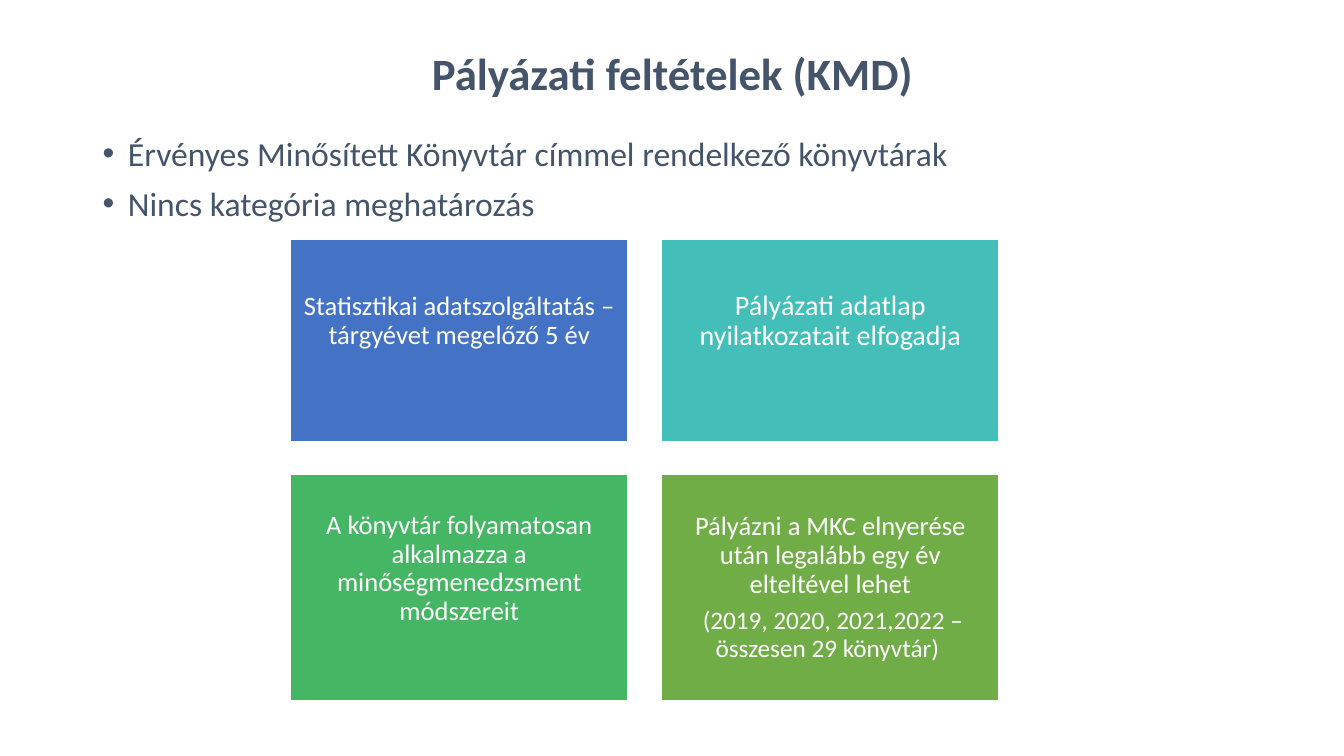
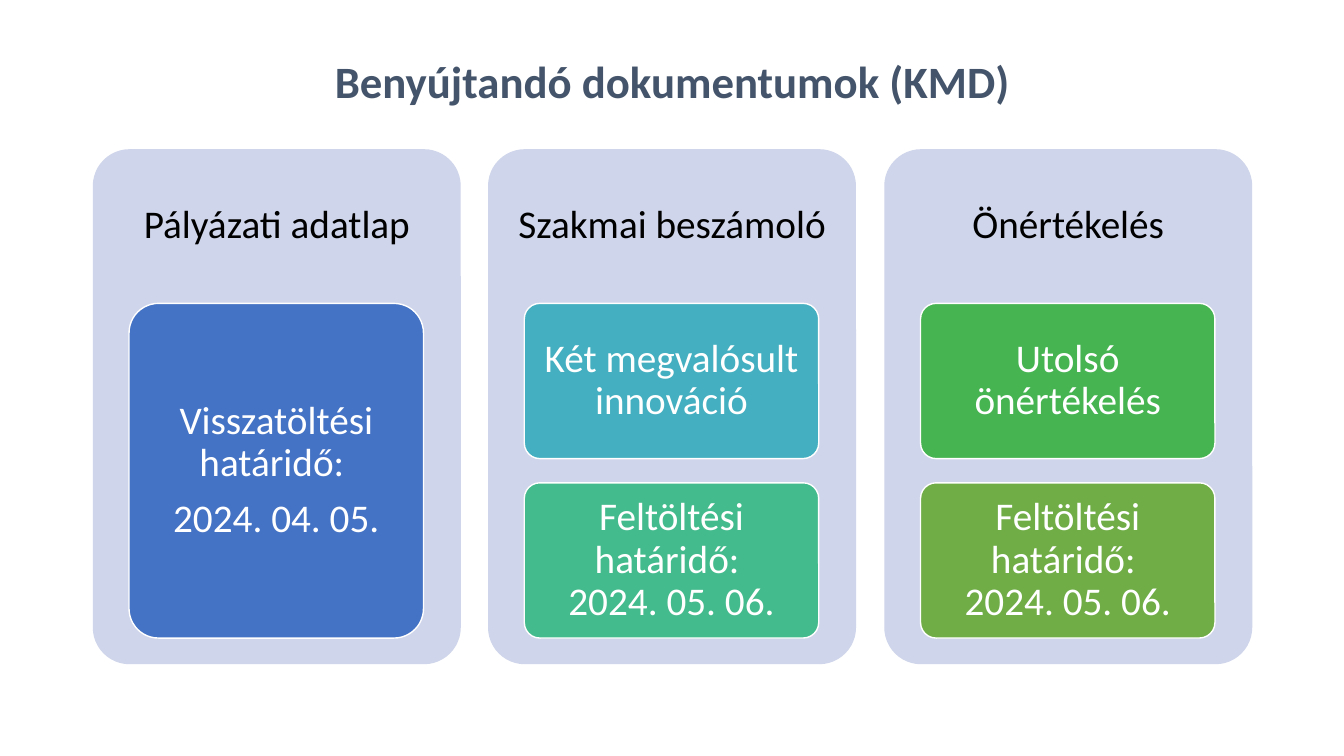
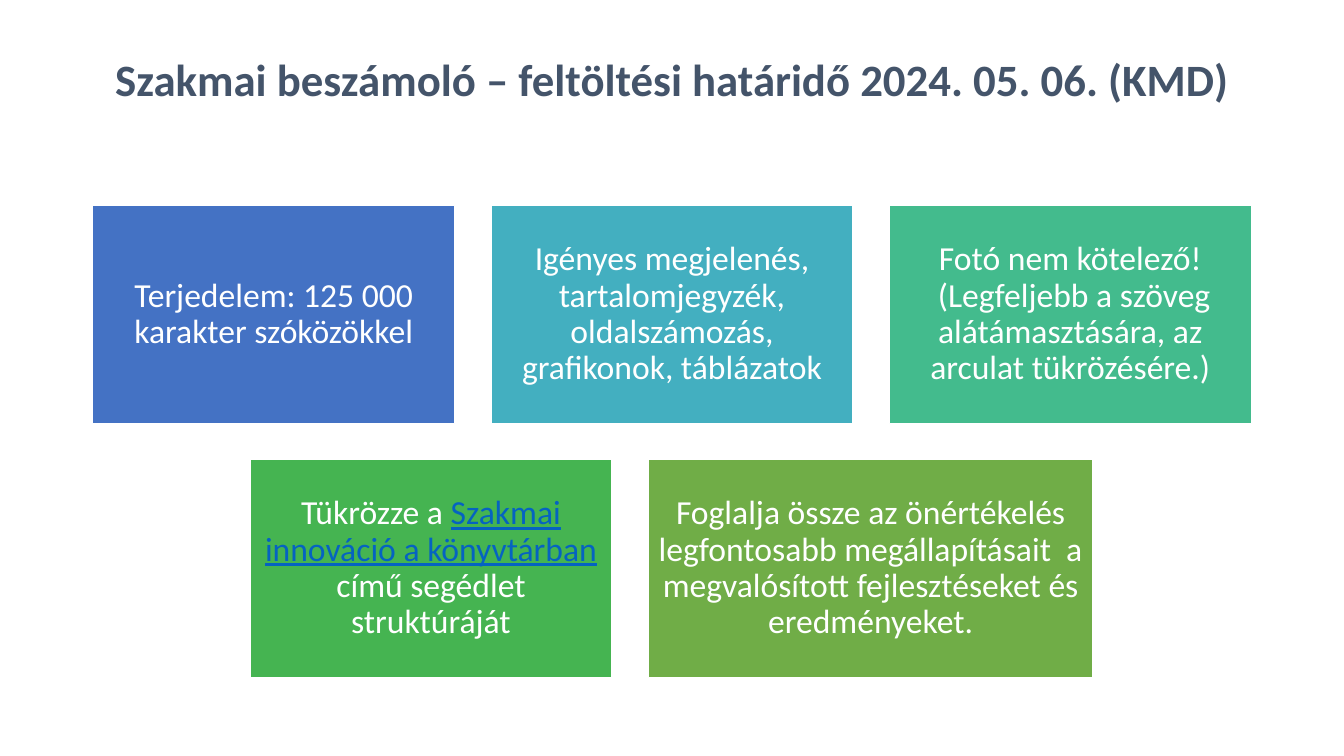
from dataclasses import dataclass
from typing import NamedTuple

from lxml.etree import SubElement
from pptx import Presentation
from pptx.dml.color import RGBColor
from pptx.enum.shapes import MSO_SHAPE as Preset
from pptx.enum.text import MSO_ANCHOR as Anchor, PP_ALIGN as Align
from pptx.oxml.ns import qn
from pptx.util import Emu, Pt

# Shared scale and style: 100 px to the inch
PX = 9144
SLIDE_WIDTH, SLIDE_HEIGHT = 1333, 750
CONTENT_LEFT, CONTENT_WIDTH = 92, 1150
TITLE_TOP = 40
FONT = "Calibri"
LINE_SPACING = 0.9
DIAGRAM_GAP = 0.35  # paragraph gap as a share of the text size

WHITE = RGBColor(0xFF, 0xFF, 0xFF)
BLACK = RGBColor(0x00, 0x00, 0x00)
SLATE = RGBColor(0x44, 0x54, 0x6A)
LINK_BLUE = RGBColor(0x05, 0x63, 0xC1)
PALE_BLUE = RGBColor(0xCF, 0xD5, 0xEA)
BLUE = RGBColor(0x44, 0x72, 0xC4)
CYAN = RGBColor(0x43, 0xAF, 0xC0)
TEAL = RGBColor(0x43, 0xBE, 0xB9)
MINT = RGBColor(0x43, 0xBB, 0x8D)
EMERALD = RGBColor(0x45, 0xB6, 0x64)
GREEN = RGBColor(0x45, 0xB4, 0x51)
OLIVE = RGBColor(0x70, 0xAD, 0x47)


class Box(NamedTuple):
    left: int
    top: int
    width: int
    height: int


class Insets(NamedTuple):
    left: int
    top: int
    right: int
    bottom: int


class Span(NamedTuple):
    text: str
    size: int | None = None
    color: RGBColor | None = None
    underline: bool = False


Line = str | list[Span]


@dataclass
class Tile:
    lines: list[Line]
    fill: RGBColor
    size: int = 24
    raise_by: int = 0  # extra bottom inset that lifts the text
    width: int = 359


@dataclass
class Panel:
    heading: str
    cards: list[Tile]


def emu(box: Box) -> list[Emu]:
    return [Emu(length * PX) for length in box]


# Text
def write(shape, lines: list[Line], *, size: int, color: RGBColor = WHITE,
          bold: bool = False, align: Align = Align.CENTER,
          anchor: Anchor = Anchor.MIDDLE, gap: float | None = None,
          bullet: bool = False, insets: Insets = Insets(10, 5, 10, 5)) -> None:
    frame = shape.text_frame
    frame.word_wrap = True
    frame.vertical_anchor = anchor
    (frame.margin_left, frame.margin_top,
     frame.margin_right, frame.margin_bottom) = [Emu(i * PX) for i in insets]
    for index, line in enumerate(lines):
        paragraph = frame.add_paragraph() if index else frame.paragraphs[0]
        paragraph.alignment = align
        paragraph.line_spacing = LINE_SPACING
        if index:
            paragraph.space_before = Pt(size * DIAGRAM_GAP if gap is None else gap)
        if bullet:
            properties = paragraph._p.get_or_add_pPr()
            properties.set("marL", str(25 * PX))
            properties.set("indent", str(-25 * PX))
            SubElement(properties, qn("a:buFont"), typeface="Arial")
            SubElement(properties, qn("a:buChar"), char="•")
        for span in [Span(line)] if isinstance(line, str) else line:
            for part_index, part in enumerate(span.text.split("\n")):
                if part_index:
                    paragraph.add_line_break()
                run = paragraph.add_run()
                run.text = part
                run.font.name = FONT
                run.font.size = Pt(span.size or size)
                run.font.bold = bold
                run.font.underline = span.underline
                run.font.color.rgb = span.color or color


def add_label(slide, box: Box, lines: list[Line], **text_format) -> None:
    write(slide.shapes.add_textbox(*emu(box)), lines, **text_format)


def add_titled_slide(presentation, title: str, height: int):
    slide = presentation.slides.add_slide(presentation.slide_layouts[6])
    add_label(slide, Box(CONTENT_LEFT, TITLE_TOP, CONTENT_WIDTH, height),
              [title], size=32, color=SLATE, bold=True)
    return slide


# Filled blocks
def add_block(slide, box: Box, fill: RGBColor, *, rounded: bool = False,
              outlined: bool = True):
    preset = Preset.ROUNDED_RECTANGLE if rounded else Preset.RECTANGLE
    shape = slide.shapes.add_shape(preset, *emu(box))
    shape.shadow.inherit = False
    if rounded:
        shape.adjustments[0] = 0.1
    shape.fill.solid()
    shape.fill.fore_color.rgb = fill
    if outlined:
        shape.line.color.rgb = WHITE
        shape.line.width = Pt(1)
    else:
        shape.line.fill.background()
    return shape


def add_tile_row(slide, tiles: list[Tile], *, top: int, height: int, gap: int,
                 inset: int, left: int | None = None) -> None:
    """Draw tiles side by side, centred on the slide unless left is given."""
    if left is None:
        row_width = sum(tile.width for tile in tiles) + gap * (len(tiles) - 1)
        left = round((SLIDE_WIDTH - row_width) / 2)
    for tile in tiles:
        shape = add_block(slide, Box(left, top, tile.width, height), tile.fill)
        write(shape, tile.lines, size=tile.size,
              insets=Insets(inset, inset, inset, inset + tile.raise_by))
        left += tile.width + gap


# Slide 1: conditions
def build_conditions(presentation) -> None:
    slide = add_titled_slide(presentation, "Pályázati feltételek (KMD)", 70)
    add_label(slide, Box(CONTENT_LEFT, 131, CONTENT_WIDTH, 100),
              ["Érvényes Minősített Könyvtár címmel rendelkező könyvtárak",
               "Nincs kategória meghatározás"],
              size=24, color=SLATE, align=Align.LEFT, anchor=Anchor.TOP,
              gap=10, bullet=True)
    gap, top, width = 33, 237, 335
    rows = [
        (201, [
            Tile(["Statisztikai adatszolgáltatás – tárgyévet megelőző 5 év"],
                 BLUE, 19, 37, width),
            Tile(["Pályázati adatlap nyilatkozatait elfogadja"],
                 TEAL, 20, 37, width)]),
        (224, [
            Tile(["A könyvtár folyamatosan alkalmazza a "
                  "minőségmenedzsment módszereit"], EMERALD, 19, 37, width),
            Tile(["Pályázni a MKC elnyerése után legalább egy év elteltével lehet",
                  [Span(" (2019, 2020, 2021,2022 – összesen 29 könyvtár) ", 18)]],
                 OLIVE, 19, 0, width)]),
    ]
    for height, tiles in rows:
        add_tile_row(slide, tiles, top=top, height=height, gap=gap, inset=8,
                     left=288)
        top += height + gap


# Slide 2: documents
def build_documents(presentation) -> None:
    slide = add_titled_slide(presentation, "Benyújtandó dokumentumok (KMD)", 86)
    upload_deadline: list[Line] = ["Feltöltési határidő: \n2024. 05. 06."]
    panels = [
        Panel("Pályázati adatlap", [
            Tile(["Visszatöltési határidő: ", "2024. 04. 05."], BLUE)]),
        Panel("Szakmai beszámoló", [
            Tile(["Két megvalósult innováció"], CYAN),
            Tile(upload_deadline, MINT)]),
        Panel("Önértékelés", [
            Tile(["Utolsó önértékelés"], GREEN),
            Tile(upload_deadline, OLIVE)]),
    ]
    top, width, height, heading_height = 148, 365, 511, 153
    card_width, stack_height, card_gap = 292, 332, 24
    for column, panel in enumerate(panels):
        left = CONTENT_LEFT + column * (CONTENT_WIDTH - width) // (len(panels) - 1)
        add_block(slide, Box(left, top, width, height), PALE_BLUE,
                  rounded=True, outlined=False)
        add_label(slide, Box(left, top, width, heading_height), [panel.heading],
                  size=28, color=BLACK, insets=Insets(12, 12, 12, 12))
        count = len(panel.cards)
        card_height = (stack_height - card_gap * (count - 1)) // count
        for row, card in enumerate(panel.cards):
            card_top = top + heading_height + row * (card_height + card_gap)
            shape = add_block(
                slide, Box(left + (width - card_width) // 2, card_top,
                           card_width, card_height), card.fill, rounded=True)
            write(shape, card.lines, size=28, insets=Insets(8, 6, 8, 6))


# Slide 3: report
def build_report(presentation) -> None:
    slide = add_titled_slide(
        presentation,
        "Szakmai beszámoló – feltöltési határidő 2024. 05. 06. (KMD)", 82)
    rows = [
        [Tile(["Terjedelem: 125 000 karakter szóközökkel"], BLUE),
         Tile(["Igényes megjelenés, tartalomjegyzék, oldalszámozás, "
               "grafikonok, táblázatok"], CYAN),
         Tile(["Fotó nem kötelező!\n (Legfeljebb a szöveg alátámasztására, "
               "az arculat tükrözésére.)"], MINT)],
        [Tile([[Span("Tükrözze a "),
                Span("Szakmai innováció a könyvtárban ", color=LINK_BLUE,
                     underline=True),
                Span("című segédlet struktúráját")]], GREEN),
         Tile(["Foglalja össze az önértékelés legfontosabb megállapításait  a "
               "megvalósított fejlesztéseket és eredményeket."],
              OLIVE, width=441)],
    ]
    height, gap = 216, 36
    for index, tiles in enumerate(rows):
        add_tile_row(slide, tiles, top=204 + index * (height + gap),
                     height=height, gap=gap, inset=10)


def main() -> None:
    presentation = Presentation()
    presentation.slide_width = Emu(SLIDE_WIDTH * PX)
    presentation.slide_height = Emu(SLIDE_HEIGHT * PX)
    build_conditions(presentation)
    build_documents(presentation)
    build_report(presentation)
    presentation.save("out.pptx")


if __name__ == "__main__":
    main()
